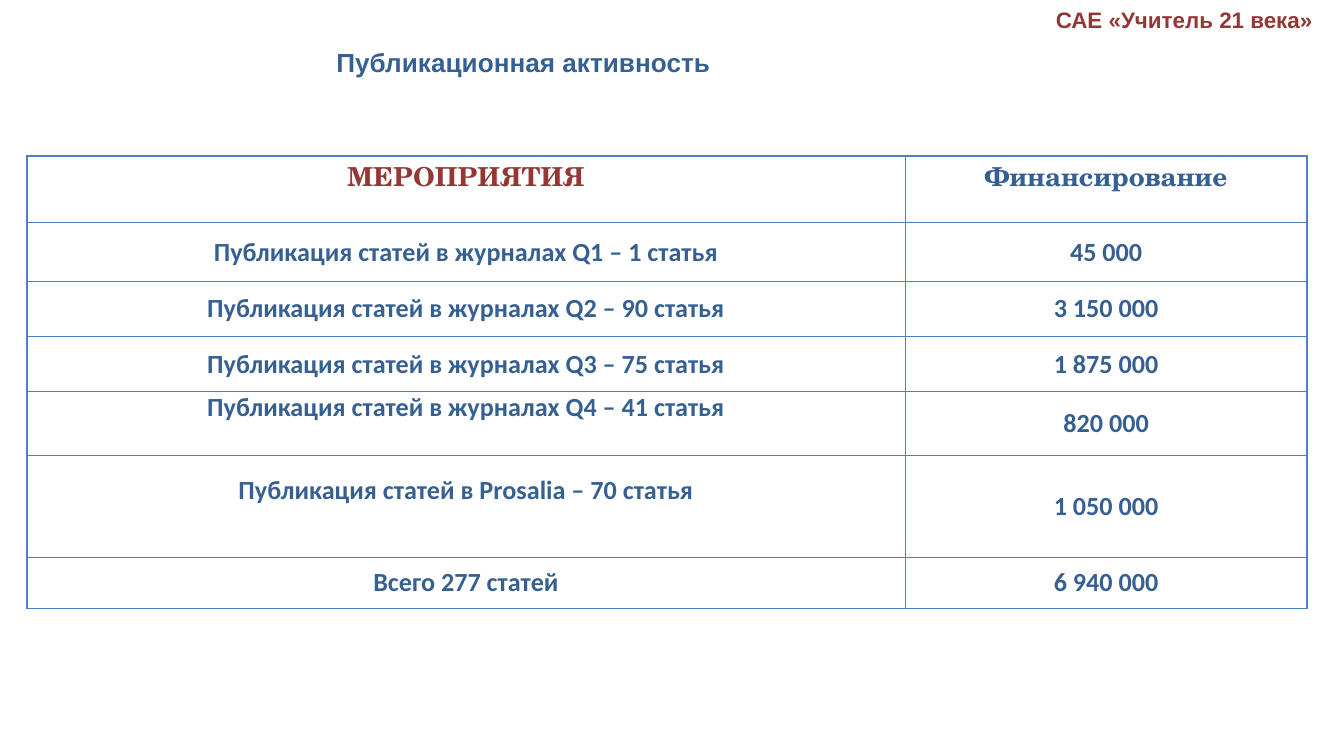
from dataclasses import dataclass

from lxml import etree
from pptx import Presentation
from pptx.dml.color import RGBColor
from pptx.enum.text import MSO_ANCHOR, MSO_AUTO_SIZE, PP_ALIGN
from pptx.oxml.ns import qn
from pptx.util import Pt

CENTER, LEFT = PP_ALIGN.CENTER, PP_ALIGN.LEFT
TOP, MIDDLE, BOTTOM = MSO_ANCHOR.TOP, MSO_ANCHOR.MIDDLE, MSO_ANCHOR.BOTTOM
NO_AUTOFIT = MSO_AUTO_SIZE.NONE
TITLE_ONLY = 5


@dataclass(frozen=True)
class Theme:
    blue: str = "376092"
    red: str = "953735"
    border: str = "4F81BD"
    heading_font: str = "Arial"
    header_font: str = "TeX Gyre Schola"
    body_font: str = "Calibri"
    size: float = 14
    label_size: float = 12
    border_width: float = 1


THEME = Theme()

COLUMN_WIDTHS = (470.6, 215.3)
# Row height, activity, funding, gap kept below the activity
ROWS = (
    (31.6, "Публикация статей в журналах Q1 – 1 статья", "45 000", 0),
    (29.5, "Публикация статей в журналах Q2 – 90 статья", "3 150 000", 0),
    (29.5, "Публикация статей в журналах Q3 – 75 статья", "1 875 000", 0),
    (34.3, "Публикация статей в журналах Q4 – 41 статья", "820 000", 17),
    (54.6, "Публикация статей в Prosalia – 70 статья", "1 050 000", 17),
    (27.3, "Всего 277 статей", "6 940 000", 0),
)
HEADER_HEIGHT, HEADER_GAP = 33.8, 14


def set_text(tf, text, font, size, color, align):
    tf.text = text
    p = tf.paragraphs[0]
    p.alignment = align
    f = p.runs[0].font
    f.name, f.size, f.bold = font, Pt(size), True
    f.color.rgb = RGBColor.from_string(color)


def place_heading(sp, box, text, size, color, align):
    sp.left, sp.top, sp.width, sp.height = (Pt(v) for v in box)
    tf = sp.text_frame
    tf.word_wrap = True
    tf.auto_size = NO_AUTOFIT
    tf.vertical_anchor = TOP
    set_text(tf, text, THEME.heading_font, size, color, align)


def set_borders(cell):
    tc_pr = cell._tc.get_or_add_tcPr()
    for i, side in enumerate(("lnL", "lnR", "lnT", "lnB")):
        ln = etree.Element(qn(f"a:{side}"), w=str(Pt(THEME.border_width)))
        fill = etree.SubElement(ln, qn("a:solidFill"))
        etree.SubElement(fill, qn("a:srgbClr"), val=THEME.border)
        tc_pr.insert(i, ln)


def fill_cell(cell, text, font, color, anchor, gap_below):
    cell.margin_left = cell.margin_right = cell.margin_top = 0
    cell.margin_bottom = Pt(gap_below)
    cell.vertical_anchor = anchor
    cell.fill.background()
    set_borders(cell)
    set_text(cell.text_frame, text, font, THEME.size, color, CENTER)


def add_funding_table(slide):
    heights = [HEADER_HEIGHT] + [row[0] for row in ROWS]
    table = slide.shapes.add_table(
        len(heights), len(COLUMN_WIDTHS), Pt(14.4), Pt(83.5),
        Pt(sum(COLUMN_WIDTHS)), Pt(sum(heights))).table
    table.first_row = table.horz_banding = False
    for column, width in zip(table.columns, COLUMN_WIDTHS):
        column.width = Pt(width)
    for row, height in zip(table.rows, heights):
        row.height = Pt(height)

    headers = (("МЕРОПРИЯТИЯ", THEME.red), ("Финансирование", THEME.blue))
    for c, (text, color) in enumerate(headers):
        fill_cell(table.cell(0, c), text, THEME.header_font, color, BOTTOM, HEADER_GAP)
    for r, (_, activity, funding, gap) in enumerate(ROWS, start=1):
        for c, (text, below) in enumerate(((activity, gap), (funding, 0))):
            fill_cell(table.cell(r, c), text, THEME.body_font, THEME.blue, MIDDLE, below)


def main():
    prs = Presentation()
    prs.slide_width, prs.slide_height = Pt(720), Pt(405)
    slide = prs.slides.add_slide(prs.slide_layouts[TITLE_ONLY])
    place_heading(slide.shapes.title, (36.7, 21, 487.4, 24.5),
                  "Публикационная активность", THEME.size, THEME.blue, CENTER)
    label_box = (558.5, 0, 161.5, 21.6)
    label = slide.shapes.add_textbox(*(Pt(v) for v in label_box))
    place_heading(label, label_box, "САЕ «Учитель 21 века»",
                  THEME.label_size, THEME.red, LEFT)
    add_funding_table(slide)
    prs.save("out.pptx")


if __name__ == "__main__":
    main()
